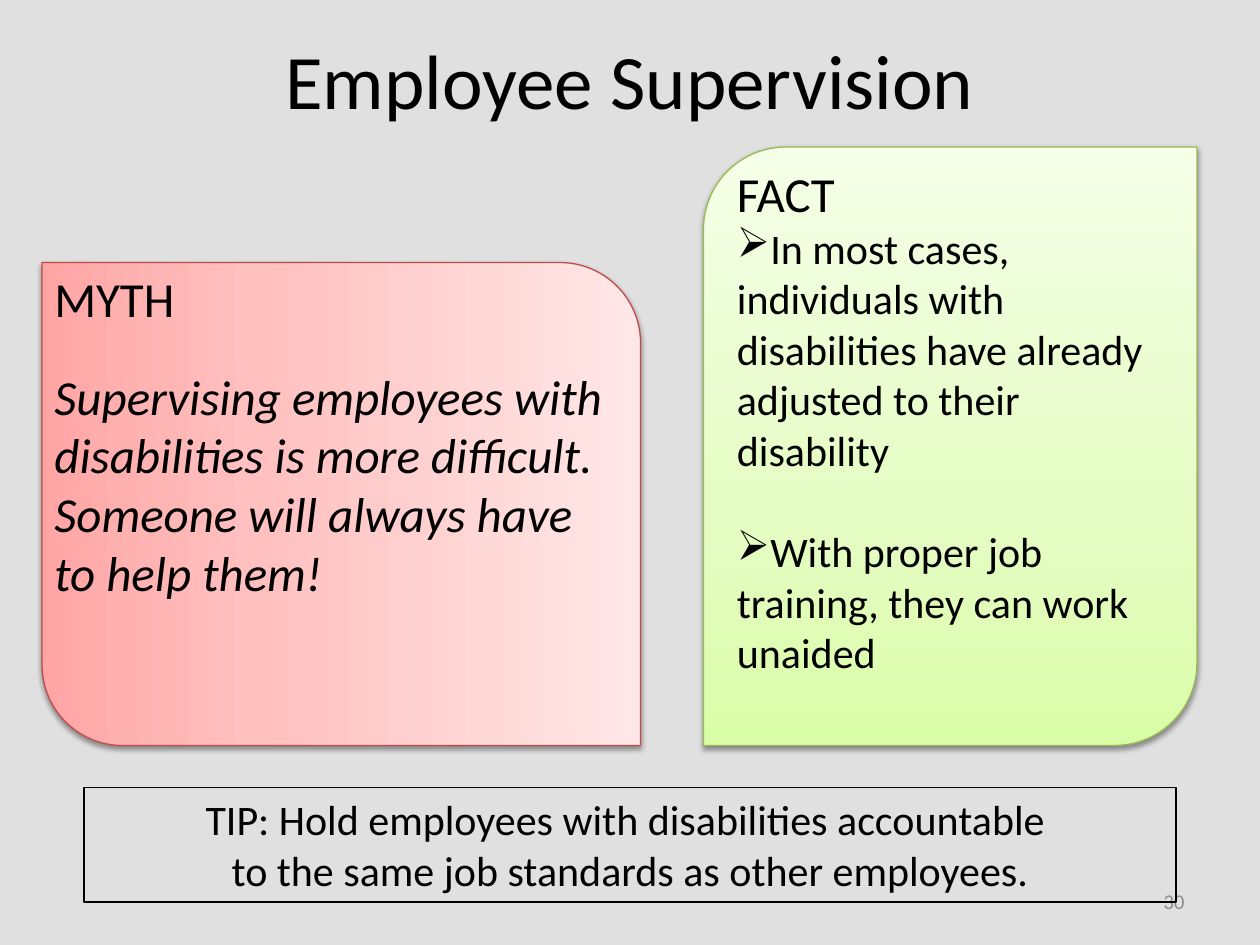
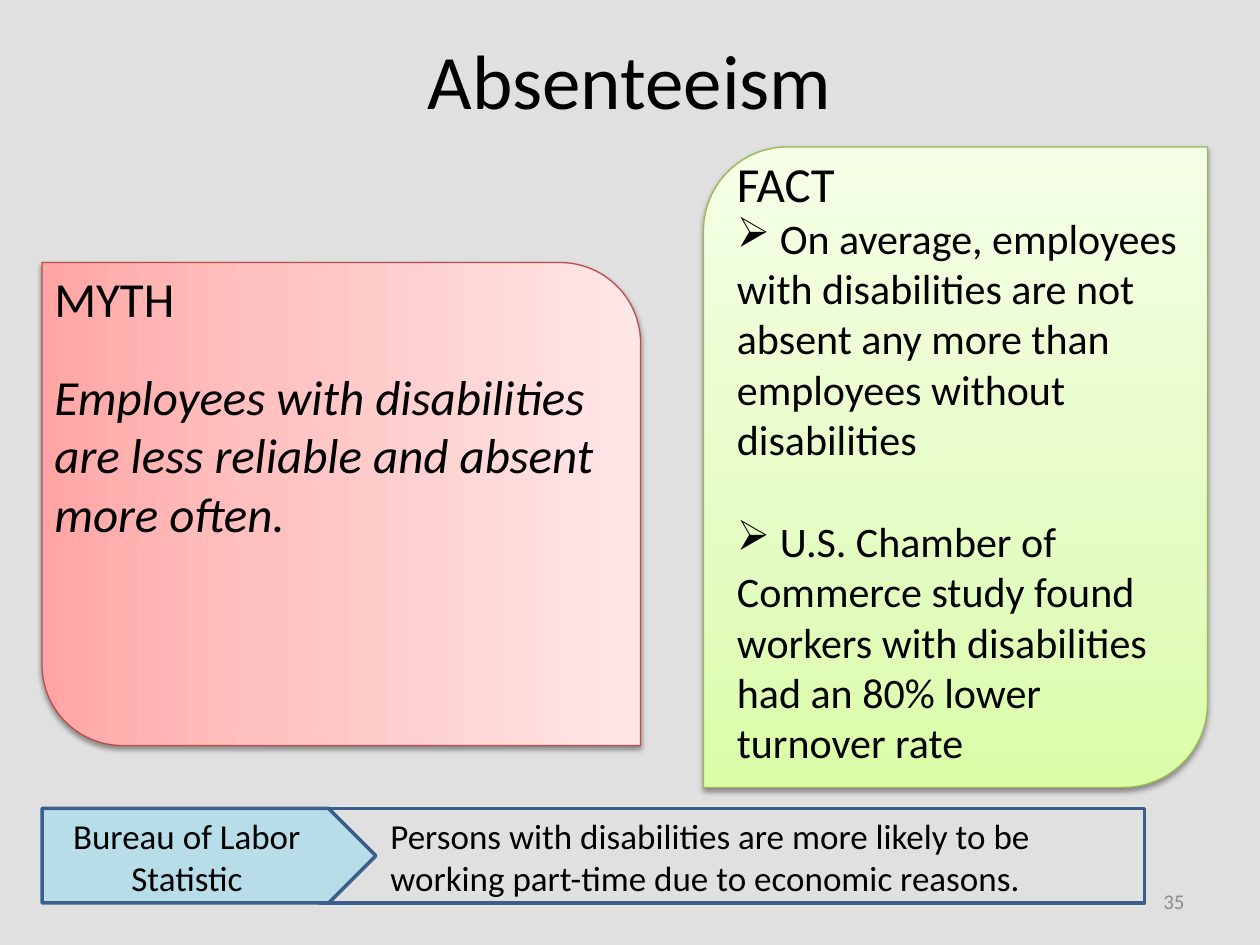
from copy import deepcopy
from dataclasses import dataclass

from lxml import etree
from pptx import Presentation
from pptx.dml.color import RGBColor
from pptx.enum.shapes import MSO_SHAPE
from pptx.enum.text import MSO_ANCHOR, PP_ALIGN
from pptx.oxml.ns import qn
from pptx.util import Inches, Pt

LEFT, CENTER, RIGHT = PP_ALIGN.LEFT, PP_ALIGN.CENTER, PP_ALIGN.RIGHT
TOP, MIDDLE = MSO_ANCHOR.TOP, MSO_ANCHOR.MIDDLE
CARD = MSO_SHAPE.ROUND_2_DIAG_RECTANGLE
RECTANGLE, PENTAGON = MSO_SHAPE.RECTANGLE, MSO_SHAPE.PENTAGON

BACKGROUND = RGBColor(0xE0, 0xE0, 0xE0)
BLACK = RGBColor(0x00, 0x00, 0x00)
GREY = RGBColor(0x8C, 0x8C, 0x8C)
BLUE = RGBColor(0x3A, 0x5F, 0x8C)
LIGHT_BLUE = RGBColor(0xB7, 0xDE, 0xE8)
RED = RGBColor(0xBF, 0x4C, 0x48)
GREEN = RGBColor(0x98, 0xB9, 0x55)
RED_FADE = [(0, RGBColor(0xFF, 0xA6, 0xA5)), (0.35, RGBColor(0xFF, 0xC0, 0xBF)),
            (1, RGBColor(0xFF, 0xE7, 0xE7))]
GREEN_FADE = [(0, RGBColor(0xDA, 0xFD, 0xA7)), (0.35, RGBColor(0xE4, 0xFC, 0xC2)),
              (1, RGBColor(0xF5, 0xFF, 0xE7))]

FONT = "Calibri"
HEADING, BODY, SOURCE = 28, 24, 20
LINE = 1.22  # line height as a share of the text size
COLUMNS, ROWS = 120, 90


@dataclass
class Para:
    text: str
    size: int = BODY
    italic: bool = False
    bullet: bool = False
    gap: float = 0


class Deck:
    def __init__(self):
        self.prs = Presentation()
        self.prs.slide_width, self.prs.slide_height = Inches(10), Inches(7.5)
        self.slide = None

    def box(self, column, row, columns, rows):
        """Turn grid units into left, top, width and height."""
        x, y = self.prs.slide_width / COLUMNS, self.prs.slide_height / ROWS
        return [round(v) for v in (column * x, row * y, columns * x, rows * y)]

    def add_paras(self, frame, paras, align=LEFT, anchor=TOP, color=BLACK):
        frame.word_wrap = True
        frame.vertical_anchor = anchor
        for index, para in enumerate(paras):
            line = frame.add_paragraph() if index else frame.paragraphs[0]
            line.alignment = align
            if para.gap:
                line.space_before = Pt(para.gap)
            if para.bullet:
                mark = etree.SubElement(line._p.get_or_add_pPr(), qn("a:buChar"))
                mark.set("char", "➢")
            run = line.add_run()
            run.text = para.text
            run.font.name, run.font.size = FONT, Pt(para.size)
            run.font.italic = para.italic
            run.font.color.rgb = color

    def start(self, heading, number):
        self.slide = self.prs.slides.add_slide(self.prs.slide_layouts[5])
        fill = self.slide.background.fill
        fill.solid()
        fill.fore_color.rgb = BACKGROUND
        title = self.slide.shapes.title
        title.left, title.top, title.width, title.height = self.box(6, 0, 108, 15)
        self.add_paras(title.text_frame, [Para(heading, 44)], CENTER, MIDDLE)
        self.text((86, 83.4, 28, 4.8), [Para(number, 12)], RIGHT, MIDDLE, GREY)

    def text(self, area, paras, *style):
        frame = self.slide.shapes.add_textbox(*self.box(*area)).text_frame
        self.add_paras(frame, paras, *style)

    def shape(self, kind, area, line, weight, fill=None):
        shape = self.slide.shapes.add_shape(kind, *self.box(*area))
        shape.shadow.inherit = False
        shape.line.color.rgb, shape.line.width = line, Pt(weight)
        if fill is None:
            shape.fill.background()
        else:
            shape.fill.solid()
            shape.fill.fore_color.rgb = fill
        return shape

    def card(self, area, line, fade, turned=False):
        """Draw a shaded card; a turned one is rotated a quarter to fill its area."""
        column, row, columns, rows = area
        if turned:
            shift = (columns - rows) / 2
            area = column + shift, row - shift, rows, columns
        card = self.shape(CARD, area, line, 0.75)
        card.rotation = 90 if turned else 0
        card.fill.gradient()
        card.fill.gradient_angle = 90
        properties = card._element.spPr
        stops = properties.find(".//" + qn("a:gsLst"))
        stops.insert(1, deepcopy(stops[0]))
        for stop, (position, color) in zip(card.fill.gradient_stops, fade):
            stop.position, stop.color.rgb = position, color
        shadow = etree.SubElement(
            properties.find(qn("a:effectLst")), qn("a:outerShdw"),
            blurRad=str(Pt(3.1)), dist=str(Pt(1.6)), dir="5400000", rotWithShape="0")
        tone = etree.SubElement(shadow, qn("a:srgbClr"), val=str(BLACK))
        etree.SubElement(tone, qn("a:alpha"), val="38000")

    def myth(self, claim):
        area = (4, 25, 57, 46)
        self.card(area, RED, RED_FADE, turned=True)
        self.text((4, 25, 55, 46), [Para("MYTH", HEADING),
                                    Para(claim, HEADING, italic=True, gap=18 * LINE)])

    def fact(self, columns, rows, text_row, text_columns, points):
        self.card((67, 14, columns, rows), GREEN, GREEN_FADE)
        self.text((69, text_row, text_columns, ROWS - text_row),
                  [Para("FACT", HEADING)] + points)

    def tip(self, lines):
        tip = self.shape(RECTANGLE, (8, 75, 104, 10.92), BLACK, 0.75)
        self.add_paras(tip.text_frame, [Para(line) for line in lines], CENTER)

    def statistic(self, source, finding):
        row, rows = 77, 9
        self.shape(RECTANGLE, (30.5, row, 78.5, rows), BLUE, 2)
        self.shape(PENTAGON, (4, row, 31.8, rows), BLUE, 2, LIGHT_BLUE)
        self.text((4, row, 27.6, rows), [Para(source, SOURCE)], CENTER)
        self.text((36, row, 72, rows), [Para(finding, SOURCE)])


def main():
    deck = Deck()

    deck.start("Employee Supervision", "30")
    deck.fact(47, 57, 15, 44, [
        Para("In most cases,", bullet=True),
        Para("individuals with disabilities have already adjusted to their disability"),
        Para("With proper job training, they can work unaided",
             bullet=True, gap=BODY * LINE)])
    deck.myth("Supervising employees with disabilities is more difficult. "
              "Someone will always have to help them!")
    deck.tip(["TIP: Hold employees with disabilities accountable ",
              "to the same job standards as other employees."])

    deck.start("Absenteeism", "35")
    deck.fact(48, 61, 14, 45, [
        Para(" On average, employees with disabilities are not absent any more "
             "than employees without disabilities", bullet=True),
        Para(" U.S. Chamber of Commerce study found workers with disabilities "
             "had an 80% lower turnover rate", bullet=True, gap=BODY * LINE)])
    deck.myth("Employees with disabilities are less reliable and absent more often.")
    deck.statistic("Bureau of Labor Statistic",
                   "Persons with disabilities are more likely to be working "
                   "part-time due to economic reasons.")

    deck.prs.save("out.pptx")


if __name__ == "__main__":
    main()
